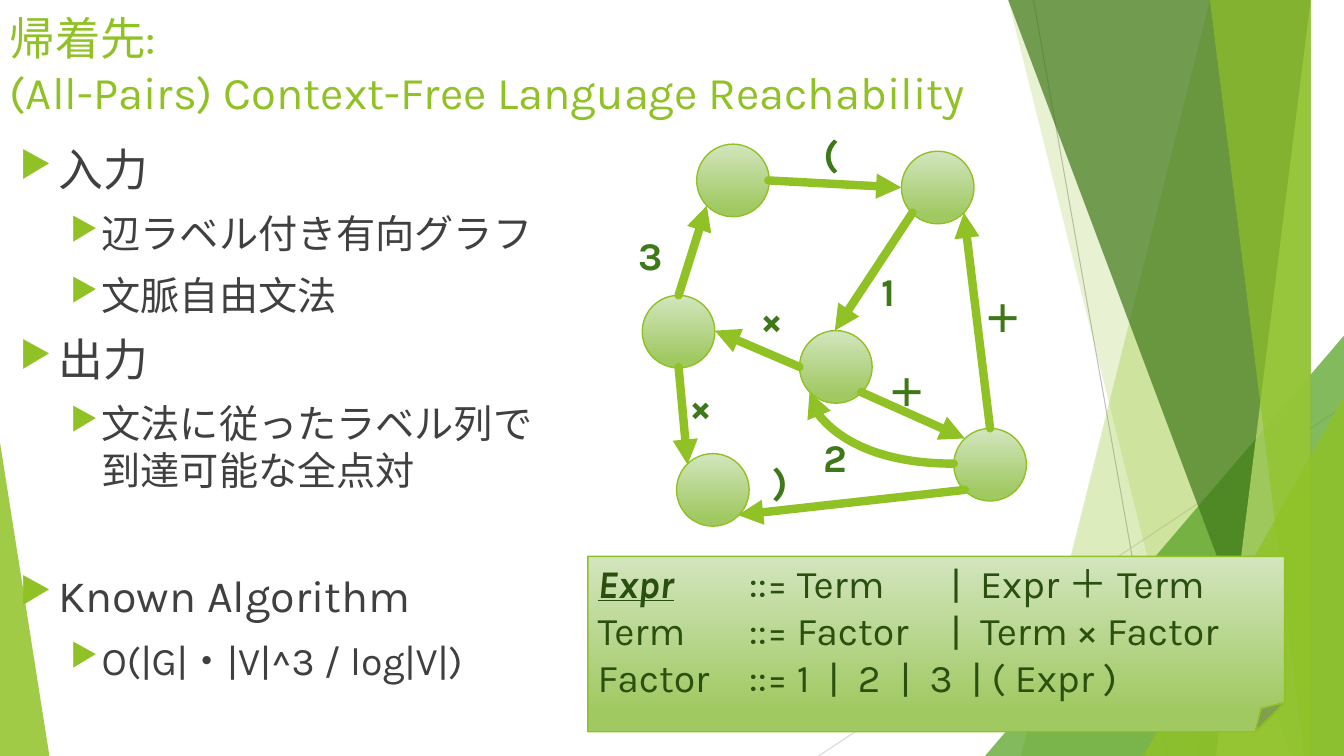
from lxml import etree
from pptx import Presentation
from pptx.dml.color import RGBColor
from pptx.enum import dml, shapes, text
from pptx.oxml import ns
from pptx.util import Inches, Pt

FONT = "Karla"
COLORS = {
    "lime": "90C226", "green": "54A021", "forest": "3F7819", "pale": "C0E474",
    "ink": "404040", "grammar": "2A5010", "top": "D3E5BE", "bottom": "A0C962",
    "gray": "BFBFBF", "light gray": "D9D9D9",
}
RIGHT, TOP, BOTTOM = 13.33, -0.01, 7.5
NODE_SIZE = 0.72

# Top x, bottom x, colour, opacity of each band that reaches the right edge
BACK_BANDS = [(12.28, 10.04, "lime", 30), (10.5, 11.83, "lime", 20)]
FRONT_BANDS = [(10.21, 12.91, "forest", 70), (13.03, 11.92, "pale", 70),
               (11.96, 13.18, "lime", 65)]

BODY = [  # level, text, space before
    (0, "入力", 10),
    (1, "辺ラベル付き有向グラフ", 10),
    (1, "文脈自由文法", 10),
    (0, "出力", 10),
    (1, "文法に従ったラベル列で到達可能な全点対", 10),
    (0, "Known Algorithm", 53),
    (1, "O(|G|・|V|^3 / log|V|)", 10),
]
LEVELS = [(0.38, -0.38, 32), (0.81, -0.31, 28)]  # margin, indent, size

NODES = [(6.91, 1.43), (8.94, 1.5), (6.37, 2.93), (6.71, 4.5), (7.93, 3.28), (9.46, 4.25)]
EDGES = [
    ((7.62, 1.79), (8.94, 1.86)), ((9.05, 2.11), (8.28, 3.28)),
    ((8.54, 3.89), (9.57, 4.35)), ((7.93, 3.64), (7.09, 3.28)),
    ((6.73, 2.93), (7.01, 2.04)), ((6.73, 3.64), (6.82, 4.61)),
    ((9.57, 4.86), (7.32, 5.11)), ((9.82, 4.25), (9.56, 2.11)),
]
CURVED_EDGE = ((9.46, 4.6), (8.03, 3.89))
LABELS = [
    ("(", 8.07, 1.24), ("1", 8.64, 2.6), ("2", 8.07, 4.25), ("＋", 8.7, 3.6),
    ("×", 7.45, 2.88), ("3", 6.23, 2.25), (")", 7.56, 4.5), ("＋", 9.66, 2.87),
    ("×", 6.75, 3.74),
]
GRAMMAR = [  # head, rule
    ("Expr", "\t\t::= Term\t\t|  Expr ＋ Term"),
    ("Term", "\t\t::= Factor\t|  Term × Factor"),
    ("Factor", "\t::= 1  |  2 \t|  3  | ( Expr )"),
]


def rgb(name):
    return RGBColor.from_string(COLORS[name])


def add_child(parent, tag, **attributes):
    return etree.SubElement(parent, ns.qn(tag), attributes)


def add_run(paragraph, words, size, color, bold=False):
    run = paragraph.add_run()
    run.text = words
    run.font.name = FONT
    run.font.size = Pt(size)
    run.font.bold = bold
    run.font.color.rgb = rgb(color)
    add_child(run.font._element, "a:ea", typeface=FONT)
    return run


def add_textbox(slide, left, top, width, height, wrap=True):
    frame = slide.shapes.add_textbox(*map(Inches, (left, top, width, height))).text_frame
    frame.word_wrap = wrap
    return frame


def paint_facet(shape, color, opacity):
    """Give a borderless, partly transparent fill."""
    shape.shadow.inherit = False
    shape.fill.solid()
    shape.fill.fore_color.rgb = rgb(color)
    shape.line.fill.background()
    solid = next(shape._element.iter(ns.qn("a:srgbClr")))
    add_child(solid, "a:alpha", val=str(opacity * 1000))


def add_band(slide, top_x, bottom_x, color, opacity):
    builder = slide.shapes.build_freeform(top_x, TOP, scale=Inches(1))
    builder.add_line_segments([(RIGHT, TOP), (RIGHT, BOTTOM), (bottom_x, BOTTOM)])
    paint_facet(builder.convert_to_shape(), color, opacity)


def add_triangle(slide, left, top, width, apex, color, opacity):
    """Draw a triangle standing on the bottom edge of the slide."""
    shape = slide.shapes.add_shape(shapes.MSO_SHAPE.ISOSCELES_TRIANGLE, Inches(left),
                                   Inches(top), Inches(width), Inches(BOTTOM - top))
    shape.adjustments[0] = apex
    paint_facet(shape, color, opacity)


def add_line(slide, start, end, color, weight, kind=shapes.MSO_CONNECTOR.STRAIGHT):
    connector = slide.shapes.add_connector(kind, *map(Inches, start + end))
    connector.line.color.rgb = rgb(color)
    connector.line.width = Pt(weight)
    add_child(connector._element.spPr, "a:effectLst")
    return connector


def add_edge(slide, start, end, kind=shapes.MSO_CONNECTOR.STRAIGHT):
    connector = add_line(slide, start, end, "lime", 6, kind)
    line = connector.line._get_or_add_ln()
    line.set("cap", "rnd")
    add_child(line, "a:tailEnd", type="triangle")
    return connector


def add_gradient_shape(slide, preset, left, top, width, height):
    shape = slide.shapes.add_shape(preset, *map(Inches, (left, top, width, height)))
    shape.shadow.inherit = False
    shape.fill.gradient()
    shape.fill.gradient_angle = 270
    for stop, color, position in zip(shape.fill.gradient_stops, ("top", "bottom"), (0, 0.88)):
        stop.color.rgb = rgb(color)
        stop.position = position
    shape.line.color.rgb = rgb("lime")
    shape.line.width = Pt(1)
    return shape


def add_background(slide):
    add_line(slide, (10.25, 0), (11.58, 7.5), "gray", 0.75)
    add_line(slide, (13.33, 4.03), (8.12, 7.5), "light gray", 0.75)
    for band in BACK_BANDS:
        add_band(slide, *band)
    add_triangle(slide, 9.77, 3.33, 3.56, 1, "green", 72)
    for band in FRONT_BANDS:
        add_band(slide, *band)
    add_triangle(slide, 11.34, 3.93, 1.99, 1, "lime", 80)
    add_triangle(slide, 0, 4.39, 0.49, 0, "lime", 85)


def add_title(slide):
    paragraph = add_textbox(slide, 0, 0.05, 10.07, 1.44).paragraphs[0]
    add_run(paragraph, "帰着先:", 32.4, "lime")
    paragraph.add_line_break()
    add_run(paragraph, "(All-Pairs) Context-Free Language Reachability", 32.4, "lime")


def add_body(slide):
    frame = add_textbox(slide, 0.1, 1.36, 5.63, 5.26)
    for index, (level, words, space) in enumerate(BODY):
        paragraph = frame.add_paragraph() if index else frame.paragraphs[0]
        margin, indent, size = LEVELS[level]
        paragraph.level = level
        paragraph.space_before = Pt(space)
        properties = paragraph._p.get_or_add_pPr()
        properties.set("marL", str(Inches(margin)))
        properties.set("indent", str(Inches(indent)))
        add_child(add_child(properties, "a:buClr"), "a:srgbClr", val=COLORS["lime"])
        add_child(properties, "a:buSzPct", val="80000")
        add_child(properties, "a:buChar", char="▶")
        add_run(paragraph, words, size, "ink")


def add_graph(slide):
    for left, top in NODES:
        add_gradient_shape(slide, shapes.MSO_SHAPE.OVAL, left, top, NODE_SIZE, NODE_SIZE)
    for start, end in EDGES:
        add_edge(slide, start, end)
    curve = add_edge(slide, *CURVED_EDGE, kind=shapes.MSO_CONNECTOR.CURVE)
    curve._element.spPr.find(ns.qn("a:prstGeom")).set("prst", "curvedConnector2")
    for words, left, top in LABELS:
        width = 0.54 if words == "＋" else 0.43
        frame = add_textbox(slide, left, top, width, 0.57, wrap=False)
        add_run(frame.paragraphs[0], words, 28, "forest", bold=True)


def add_grammar(slide):
    note = add_gradient_shape(slide, shapes.MSO_SHAPE.FOLDED_CORNER, 5.83, 5.52, 6.91, 1.74)
    frame = note.text_frame
    frame.vertical_anchor = text.MSO_ANCHOR.MIDDLE
    for index, (head, rule) in enumerate(GRAMMAR):
        paragraph = frame.add_paragraph() if index else frame.paragraphs[0]
        paragraph.alignment = text.PP_ALIGN.LEFT
        tabs = add_child(paragraph._p.get_or_add_pPr(), "a:tabLst")
        for step in range(1, 10):
            add_child(tabs, "a:tab", pos=str(Inches(0.5 * step)), algn="l")
        is_start = index == 0
        symbol = add_run(paragraph, head, 28, "grammar", bold=is_start)
        symbol.font.italic = symbol.font.underline = is_start
        add_run(paragraph, rule, 28, "grammar")


def main():
    presentation = Presentation()
    presentation.slide_width, presentation.slide_height = Inches(13.33), Inches(7.5)
    slide = presentation.slides.add_slide(presentation.slide_layouts[6])
    add_background(slide)
    add_title(slide)
    add_body(slide)
    add_graph(slide)
    add_grammar(slide)
    presentation.save("out.pptx")


if __name__ == "__main__":
    main()
